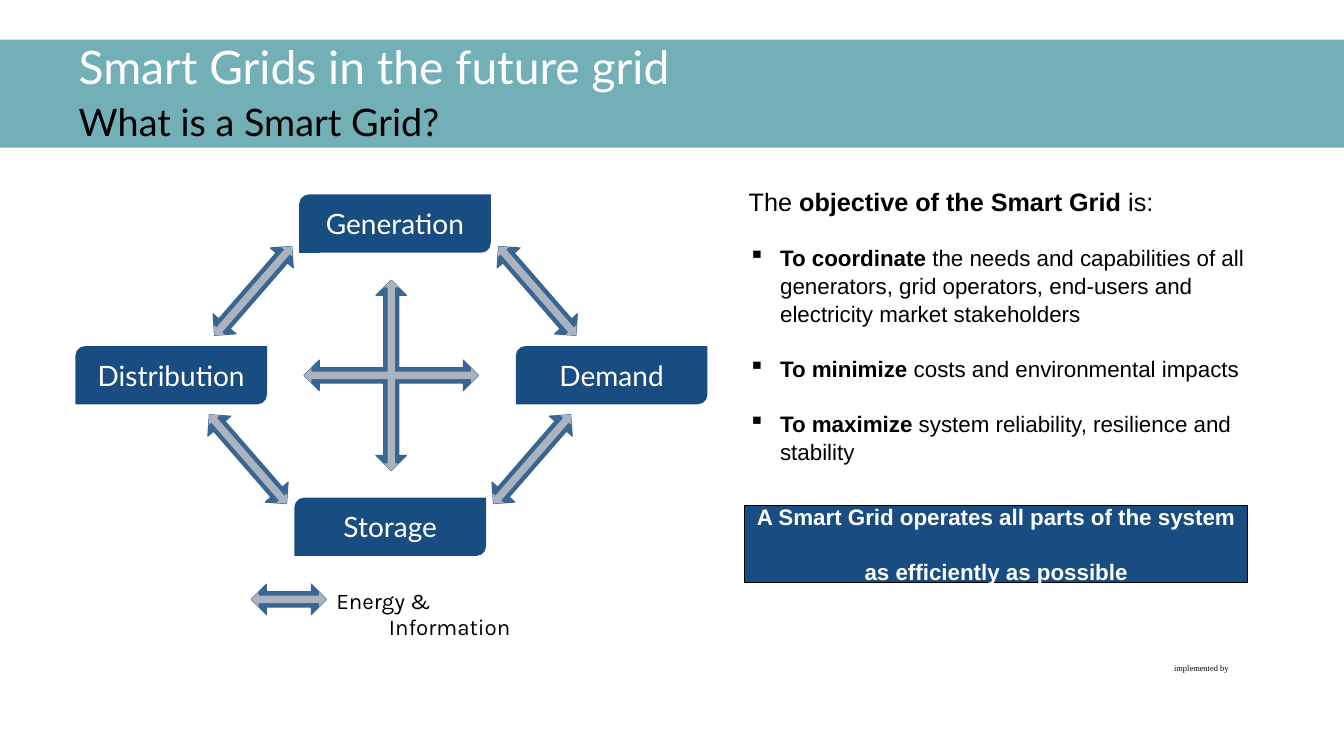
import pptx
import pptx.util
import pptx.dml.color
import pptx.enum.shapes
import pptx.enum.text
import lxml.etree

Cm = pptx.util.Cm
Pt = pptx.util.Pt
SHAPE = pptx.enum.shapes.MSO_SHAPE
ALIGN = pptx.enum.text.PP_ALIGN
ANCHOR = pptx.enum.text.MSO_ANCHOR

COLORS = {
    "band": "73AFB7",
    "navy": "194C80",
    "energy": "386691",
    "information": "ABB2C0",
    "white": "FFFFFF",
    "black": "000000",
}
NODE_SIZE = (4.83, 1.47)
ARROW_LAYERS = (
    {"width": 0.77, "shaft": 0.5, "fill": "energy", "line": "energy"},
    {"width": 0.37, "shaft": 0.65, "fill": "information", "line": None},
)


def rgb(name):
    return pptx.dml.color.RGBColor.from_string(COLORS[name])


def set_format(target, values):
    for name, value in values.items():
        setattr(target, name, value)


def add_run(paragraph, text, font, color):
    run = paragraph.add_run()
    run.text = text
    set_format(run.font, font)
    run.font.color.rgb = rgb(color)


def add_block(slide, kind, box, fill, line=None):
    block = slide.shapes.add_shape(kind, *map(Cm, box))
    block.shadow.inherit = False
    block.fill.solid()
    block.fill.fore_color.rgb = rgb(fill)
    if line:
        block.line.color.rgb = rgb(line)
        block.line.width = Pt(0.75)
    else:
        block.line.fill.background()
    return block


def add_text_frame(slide, box, values):
    frame = slide.shapes.add_textbox(*map(Cm, box)).text_frame
    set_format(frame, values)
    return frame


def set_indent(paragraph, indent, bullet=None):
    properties = paragraph._p.get_or_add_pPr()
    properties.set("marL", str(Cm(indent)))
    properties.set("indent", str(-Cm(indent)))
    if bullet:
        mark = lxml.etree.SubElement(properties, pptx.oxml.ns.qn("a:buChar"))
        mark.set("char", bullet)


def add_header(slide, box):
    left, top, width, height = box
    title = slide.shapes.title
    band = add_block(slide, SHAPE.RECTANGLE, box, "band")
    title._element.addprevious(band._element)
    set_format(title, {"left": Cm(left + 1.73), "top": Cm(top),
                       "width": Cm(25.8), "height": Cm(height)})
    set_format(title.text_frame, {"vertical_anchor": ANCHOR.MIDDLE, "word_wrap": True})
    heading = title.text_frame.paragraphs[0]
    set_format(heading, {"alignment": ALIGN.LEFT, "line_spacing": Pt(36)})
    add_run(heading, "Smart Grids in the future grid", {"name": "Lato", "size": Pt(33)}, "white")
    heading.add_line_break()
    add_run(heading, "What is a Smart Grid?", {"name": "Lato", "size": Pt(27)}, "black")


def add_double_arrows(slide, left, top, arrows):
    for layer in ARROW_LAYERS:
        for center_x, center_y, length, angle in arrows:
            width = layer["width"]
            box = (left + center_x - width / 2, top + center_y - length / 2, width, length)
            arrow = add_block(slide, SHAPE.UP_DOWN_ARROW, box, layer["fill"], layer["line"])
            arrow.rotation = angle
            arrow.adjustments[0] = layer["shaft"]


def add_grid_diagram(slide, box):
    left, top, width, height = box
    node_width, node_height = NODE_SIZE
    middle = (height - node_height) / 2
    nodes = (
        ("Generation", 5.64, 0),
        ("Storage", 5.52, height - node_height),
        ("Distribution", 0, middle),
        ("Demand", width - node_width, middle),
    )
    for name, x, y in nodes:
        node = add_block(slide, SHAPE.ROUND_2_DIAG_RECTANGLE,
                         (left + x, top + y, node_width, node_height), "navy")
        node.text_frame.vertical_anchor = ANCHOR.MIDDLE
        label = node.text_frame.paragraphs[0]
        label.alignment = ALIGN.CENTER
        add_run(label, name, {"name": "Lato", "size": Pt(20)}, "white")
    add_double_arrows(slide, left, top, (
        (4.48, 2.43, 2.97, 41),
        (11.51, 6.67, 2.97, 41),
        (4.35, 6.67, 2.97, 319),
        (11.64, 2.43, 2.97, 319),
        (7.96, 4.56, 4.8, 0),
        (7.96, 4.56, 4.4, 90),
    ))


def add_legend(slide, box):
    left, top, width, height = box
    add_double_arrows(slide, left, top, ((0.95, height / 2, 1.9, 90),))
    frame = add_text_frame(slide, (left + 1.9, top, width - 1.9, height), {"word_wrap": True})
    caption = frame.paragraphs[0]
    set_indent(caption, 1.32)
    add_run(caption, "Energy & Information", {"name": "Karla", "size": Pt(16)}, "black")


def add_objectives(slide, box):
    frame = add_text_frame(slide, box, {"word_wrap": True})
    intro = frame.paragraphs[0]
    intro.line_spacing = 1.05
    for text, bold in (("The ", False), ("objective of the Smart Grid", True), (" is:", False)):
        add_run(intro, text, {"name": "Arial", "size": Pt(18), "bold": bold}, "black")
    objectives = (
        ("To coordinate", " the needs and capabilities of all generators, grid operators, "
                          "end-users and electricity market stakeholders"),
        ("To minimize", " costs and environmental impacts"),
        ("To maximize", " system reliability, resilience and stability"),
    )
    for verb, goal in objectives:
        objective = frame.add_paragraph()
        set_indent(objective, 0.79, "▪")
        set_format(objective, {"space_before": Pt(19), "line_spacing": 1.05})
        for text, bold in ((verb, True), (goal, False)):
            add_run(objective, text, {"name": "Arial", "size": Pt(16), "bold": bold}, "black")


def add_callout(slide, box):
    callout = add_block(slide, SHAPE.RECTANGLE, box, "navy", "black")
    frame = callout.text_frame
    set_format(frame, {"vertical_anchor": ANCHOR.MIDDLE, "word_wrap": True})
    lines = ("A Smart Grid operates all parts of the system", "as efficiently as possible")
    for index, text in enumerate(lines):
        line = frame.add_paragraph() if index else frame.paragraphs[0]
        set_format(line, {"alignment": ALIGN.CENTER, "space_before": Pt(19.5 * index)})
        add_run(line, text, {"name": "Arial", "size": Pt(16), "bold": True}, "white")


def add_credit(slide, box):
    margins = dict.fromkeys(("margin_left", "margin_top", "margin_right", "margin_bottom"), 0)
    frame = add_text_frame(slide, box, {"word_wrap": False, **margins})
    add_run(frame.paragraphs[0], "implemented by",
            {"name": "Times New Roman", "size": Pt(6)}, "black")


def main():
    deck = pptx.Presentation()
    set_format(deck, {"slide_width": Cm(33.87), "slide_height": Cm(19.05)})
    slide = deck.slides.add_slide(deck.slide_layouts[5])
    add_header(slide, (0, 1, 33.87, 2.72))
    add_grid_diagram(slide, (1.9, 4.9, 15.93, 9.11))
    add_legend(slide, (6.33, 14.66, 7.06, 0.89))
    add_objectives(slide, (18.62, 4.52, 13.39, 7.5))
    add_callout(slide, (18.77, 12.73, 12.67, 1.96))
    add_credit(slide, (29.59, 16.71, 1.37, 0.25))
    deck.save("out.pptx")


if __name__ == "__main__":
    main()
